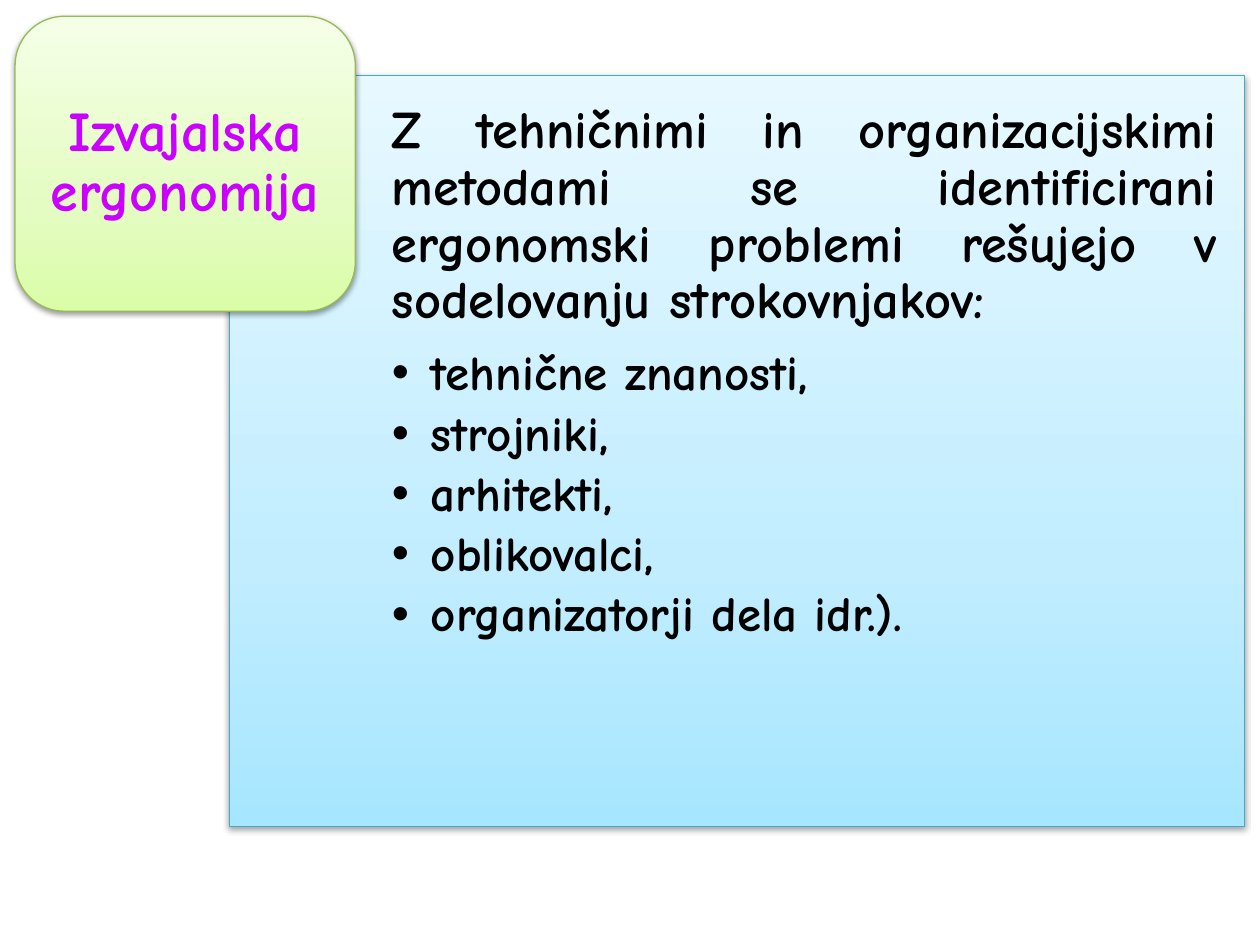
"""Build the slide on practical ergonomics: a title card over a text panel."""
import pptx
import pptx.util
import pptx.dml.color
import pptx.enum.shapes
import pptx.enum.text
import pptx.oxml
import pptx.oxml.ns

Inches, Pt = pptx.util.Inches, pptx.util.Pt
qn = pptx.oxml.ns.qn
Kind = pptx.enum.shapes.MSO_SHAPE
Align = pptx.enum.text.PP_ALIGN
Anchor = pptx.enum.text.MSO_ANCHOR
FONT = "Comic Neue"

TITLE = "Izvajalska ergonomija"
INTRO = ("Z tehničnimi in organizacijskimi metodami se identificirani "
         "ergonomski problemi rešujejo v sodelovanju strokovnjakov:")
EXPERTS = ["tehnične znanosti,", "strojniki,", "arhitekti,", "oblikovalci,",
           "organizatorji dela idr.)."]
PANELS = [
    (Kind.RECTANGLE, (1.82, 0.6, 8.06, 5.96), "46AAC5",
     [(0, "A7E6FF"), (35, "C1EDFF"), (100, "E7F8FF")]),
    (Kind.ROUNDED_RECTANGLE, (0.12, 0.13, 2.7, 2.34), "98B955",
     [(0, "DAFDA7"), (35, "E4FCC2"), (100, "F5FFE7")]),
]
TITLE_BOX = (0.23, 0.24, 2.48, 2.11)
BODY_BOX = (3.11, 0.6, 6.77, 5.96)
SHADOW = ('<a:effectLst %s><a:outerShdw blurRad="%d" dist="%d" dir="5400000" '
          'rotWithShape="0"><a:srgbClr val="000000"><a:alpha val="38000"/>'
          '</a:srgbClr></a:outerShdw></a:effectLst>')


def tint(target, code):
    target.rgb = pptx.dml.color.RGBColor.from_string(code)


def node(text):
    return pptx.oxml.parse_xml(text)


def panel(slide, depth, kind, box, edge, stops):
    shape = slide.shapes.add_shape(kind, *map(Inches, box))
    shape.fill.gradient()
    shape.fill.gradient_angle = 90
    props = shape._element.spPr
    ramp = props.find(".//" + qn("a:gsLst"))
    for stop in list(ramp):
        ramp.remove(stop)
    space = pptx.oxml.ns.nsdecls("a")
    for place, code in stops:
        ramp.append(node(f'<a:gs {space} pos="{place * 1000}">'
                         f'<a:srgbClr val="{code}"/></a:gs>'))
    tint(shape.line.color, edge)
    shape.line.width = Pt(0.75)
    props.append(node(SHADOW % (space, Pt(3.1), Pt(1.6))))
    slide.shapes._spTree.insert(2 + depth, shape._element)


def frame(holder, box, insets, anchor):
    holder.left, holder.top, holder.width, holder.height = map(Inches, box)
    text = holder.text_frame
    text.word_wrap = True
    text.auto_size = pptx.enum.text.MSO_AUTO_SIZE.NONE
    text.vertical_anchor = anchor
    (text.margin_left, text.margin_top,
     text.margin_right, text.margin_bottom) = map(Inches, insets)
    return text


def write(para, words, size, code, align, after, hang=0, bullet=False):
    para.text = words
    para.alignment = align
    para.line_spacing = 0.9
    para.space_before, para.space_after = Pt(0), Pt(size * after)
    props = para._p.get_or_add_pPr()
    props.set("marL", str(Inches(hang)))
    props.set("indent", str(-Inches(hang)))
    space = pptx.oxml.ns.nsdecls("a")
    props.append(node(f'<a:buChar {space} char="•"/>' if bullet
                      else f"<a:buNone {space}/>"))
    font = para.font
    font.name, font.size, font.bold = FONT, Pt(size), True
    tint(font.color, code)


def main():
    deck = pptx.Presentation()
    deck.slide_width, deck.slide_height = Inches(10), Inches(7.5)
    slide = deck.slides.add_slide(deck.slide_layouts[1])
    for depth, part in enumerate(PANELS):
        panel(slide, depth, *part)

    title = frame(slide.shapes.title, TITLE_BOX, (0, 0, 0, 0), Anchor.MIDDLE)
    write(title.paragraphs[0], TITLE, 32, "CC00FF", Align.CENTER, 0.35)

    body = frame(slide.placeholders[1], BODY_BOX, (0, 0.22, 0.22, 0.22),
                 Anchor.TOP)
    write(body.paragraphs[0], INTRO, 30, "000000", Align.JUSTIFY, 0.35)
    for words in EXPERTS:
        para = body.add_paragraph()
        para.level = 1
        write(para, words, 28, "000000", Align.LEFT, 0.15, 0.31, True)
    deck.save("out.pptx")


if __name__ == "__main__":
    main()
